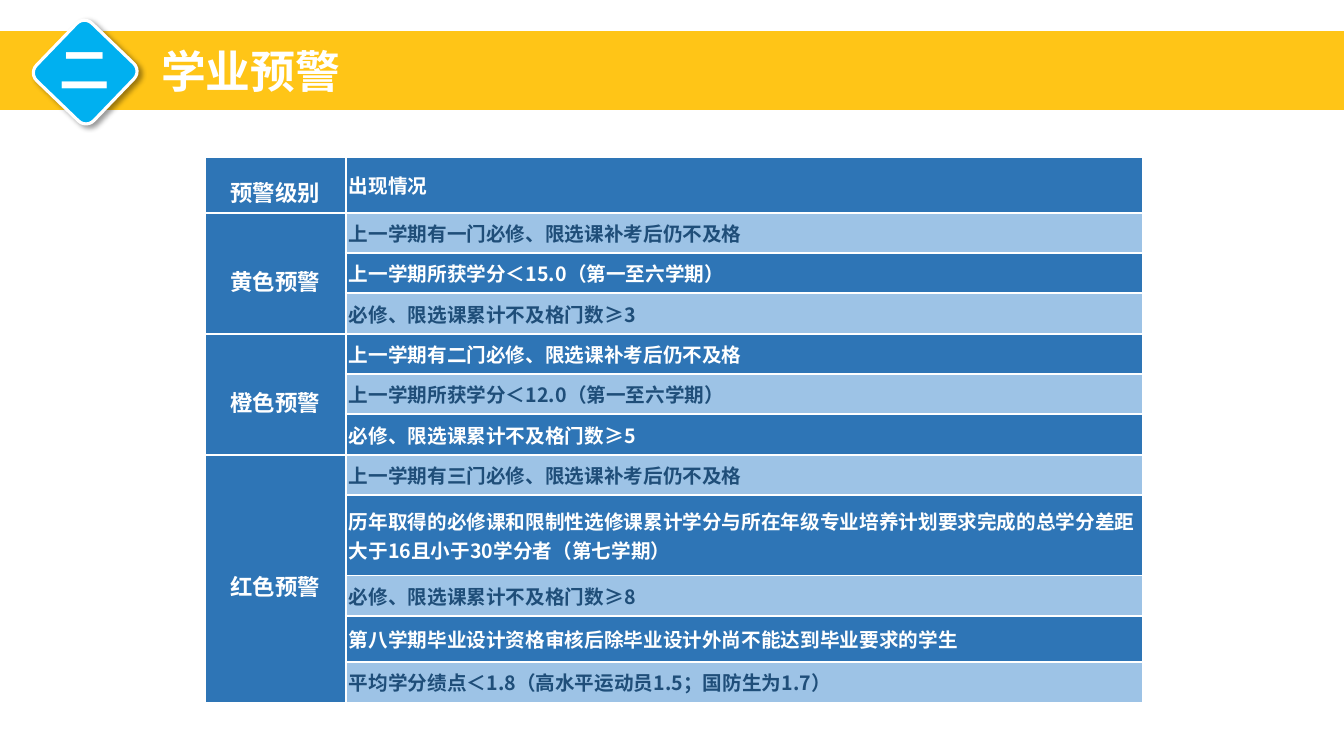
import pptx
import pptx.dml.color
import pptx.enum.shapes
import pptx.enum.text
import pptx.oxml
import pptx.oxml.ns
import pptx.util
from pptx.util import Inches

FONT = "Noto Sans CJK SC"
WHITE, BLUE, PALE, NAVY = "FFFFFF", "2E75B6", "9DC3E6", "1F4E79"
YELLOW, CYAN = "FFC000", "00B0F0"

SECTION = "二"
TITLE = "学业预警"
HEADINGS = ("预警级别", "出现情况")
WARNINGS = [
    ("黄色预警", [
        "上一学期有一门必修、限选课补考后仍不及格",
        "上一学期所获学分＜15.0（第一至六学期）",
        "必修、限选课累计不及格门数≥3",
    ]),
    ("橙色预警", [
        "上一学期有二门必修、限选课补考后仍不及格",
        "上一学期所获学分＜12.0（第一至六学期）",
        "必修、限选课累计不及格门数≥5",
    ]),
    ("红色预警", [
        "上一学期有三门必修、限选课补考后仍不及格",
        "历年取得的必修课和限制性选修课累计学分与所在年级专业培养计划要求完成的总学分差距大于16且小于30学分者（第七学期）",
        "必修、限选课累计不及格门数≥8",
        "第八学期毕业设计资格审核后除毕业设计外尚不能达到毕业要求的学生",
        "平均学分绩点＜1.8（高水平运动员1.5；国防生为1.7）",
    ]),
]
COLUMN_WIDTHS = (1.4, 7.91)
ROW_HEIGHT = 0.4
SPECIAL_ROW_HEIGHTS = {0: 0.55, 8: 0.8, 10: 0.46}


def color(value):
    return pptx.dml.color.RGBColor.from_string(value)


def element(xml):
    """Parse an XML snippet whose root carries the DrawingML namespace."""
    return pptx.oxml.parse_xml(xml.replace(">", " " + pptx.oxml.ns.nsdecls("a") + ">", 1))


def fill_solid(target, value):
    target.fill.solid()
    target.fill.fore_color.rgb = color(value)


def add_run(paragraph, text, size, value):
    run = paragraph.add_run()
    run.text = text
    run.font.size = pptx.util.Pt(size)
    run.font.bold = True
    run.font.name = FONT
    run.font.color.rgb = color(value)
    run.font._element.append(element(f'<a:ea typeface="{FONT}"></a:ea>'))


def add_label(slide, text, size, left, top, width, height):
    box = slide.shapes.add_textbox(Inches(left), Inches(top), Inches(width), Inches(height))
    frame = box.text_frame
    frame.word_wrap = False
    frame.margin_top = frame.margin_bottom = 0
    frame.vertical_anchor = pptx.enum.text.MSO_ANCHOR.MIDDLE
    add_run(frame.paragraphs[0], text, size, WHITE)


def add_banner(slide):
    kinds = pptx.enum.shapes.MSO_SHAPE
    band = slide.shapes.add_shape(
        kinds.RECTANGLE, 0, Inches(0.31), Inches(13.33), Inches(0.78))
    band.shadow.inherit = False
    fill_solid(band, YELLOW)
    band.line.fill.background()
    band_color = band._element.spPr.find(".//" + pptx.oxml.ns.qn("a:srgbClr"))
    band_color.append(element('<a:alpha val="91000"></a:alpha>'))

    diamond = slide.shapes.add_shape(
        kinds.ROUNDED_RECTANGLE, Inches(0.45), Inches(0.32), Inches(0.79), Inches(0.79))
    diamond.adjustments[0] = 0.136
    diamond.rotation = 313.9
    fill_solid(diamond, CYAN)
    diamond.line.color.rgb = color(WHITE)
    diamond.line.width = pptx.util.Pt(2.25)
    diamond._element.spPr.append(element(
        '<a:effectLst><a:outerShdw blurRad="50800" dist="38100" dir="2700000" '
        'algn="tl" rotWithShape="0"><a:srgbClr val="000000"><a:alpha val="40000"/>'
        '</a:srgbClr></a:outerShdw></a:effectLst>'))

    add_label(slide, TITLE, 32, 1.5, 0.38, 2, 0.64)
    add_label(slide, SECTION, 36, 0.49, 0.32, 0.71, 0.71)


def style_cell(cell, value):
    cell.margin_left = cell.margin_right = Inches(0.03)
    cell.margin_top = cell.margin_bottom = 0
    cell.vertical_anchor = pptx.enum.text.MSO_ANCHOR.MIDDLE
    fill_solid(cell, value)
    properties = cell._tc.get_or_add_tcPr()
    for index, side in enumerate("LRTB"):
        properties.insert(index, element(
            f'<a:ln{side} w="19050"><a:solidFill><a:srgbClr val="{WHITE}"/>'
            f'</a:solidFill></a:ln{side}>'))


def write_level(cell, text):
    paragraph = cell.text_frame.paragraphs[0]
    paragraph.alignment = pptx.enum.text.PP_ALIGN.CENTER
    paragraph.line_spacing = 1.45
    add_run(paragraph, text, 16, WHITE)


def add_warning_table(slide):
    conditions = [HEADINGS[1]] + [text for _, group in WARNINGS for text in group]
    heights = [SPECIAL_ROW_HEIGHTS.get(row, ROW_HEIGHT) for row in range(len(conditions))]
    table = slide.shapes.add_table(
        len(conditions), 2, Inches(2.03), Inches(1.56),
        Inches(sum(COLUMN_WIDTHS)), Inches(sum(heights))).table
    for column, width in zip(table.columns, COLUMN_WIDTHS):
        column.width = Inches(width)

    for row, (text, height) in enumerate(zip(conditions, heights)):
        table.rows[row].height = Inches(height)
        fill, ink = (PALE, NAVY) if row % 2 else (BLUE, WHITE)
        style_cell(table.cell(row, 0), BLUE)
        style_cell(table.cell(row, 1), fill)
        add_run(table.cell(row, 1).text_frame.paragraphs[0], text, 14, ink)

    write_level(table.cell(0, 0), HEADINGS[0])
    first = 1
    for level, group in WARNINGS:
        last = first + len(group) - 1
        table.cell(first, 0).merge(table.cell(last, 0))
        write_level(table.cell(first, 0), level)
        first = last + 1


def main():
    presentation = pptx.Presentation()
    presentation.slide_width = Inches(13.33)
    presentation.slide_height = Inches(7.5)
    slide = presentation.slides.add_slide(presentation.slide_layouts[6])
    add_banner(slide)
    add_warning_table(slide)
    presentation.save("out.pptx")


if __name__ == "__main__":
    main()
